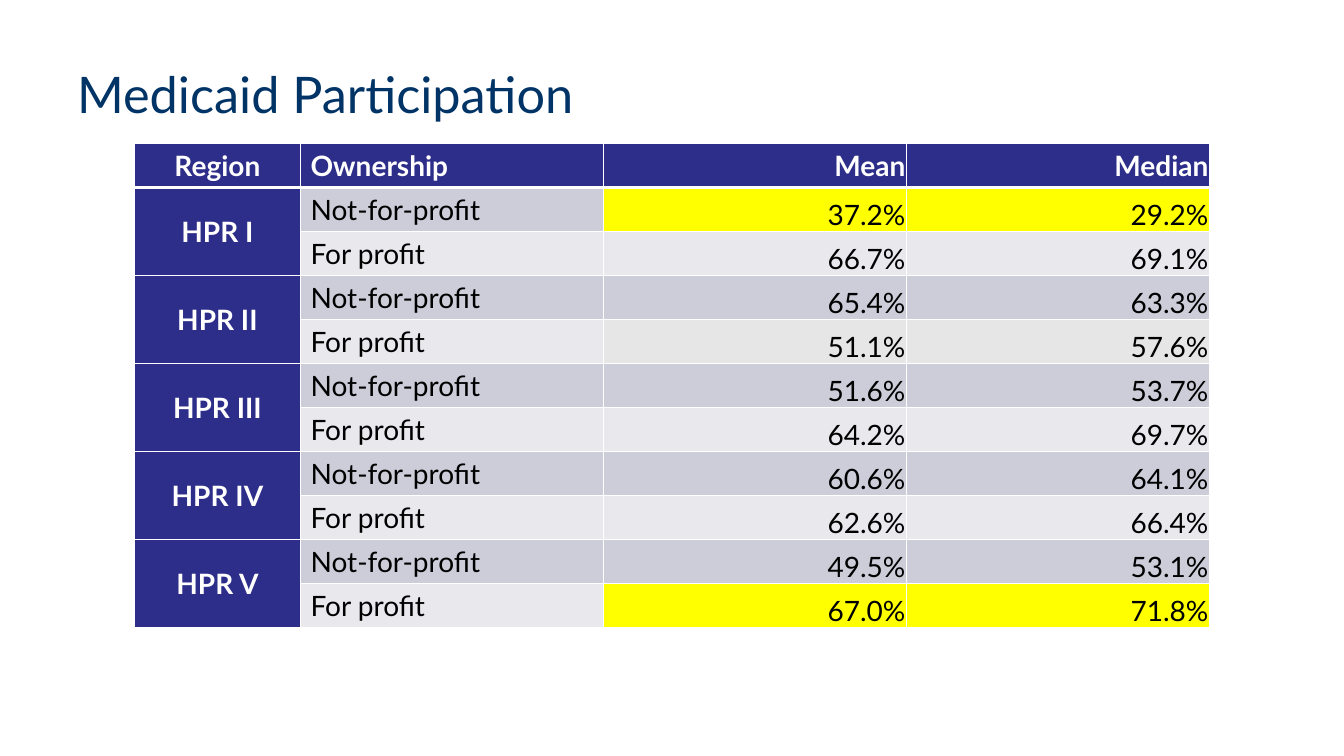
from dataclasses import dataclass

from lxml.etree import SubElement
from pptx import Presentation
from pptx.dml.color import RGBColor
from pptx.enum.text import MSO_ANCHOR as Anchor, PP_ALIGN as Align
from pptx.oxml.ns import qn
from pptx.table import Table, _Cell as Cell
from pptx.text.text import TextFrame
from pptx.util import Emu, Inches, Pt

WIDTH, HEIGHT = Inches(13.33), Inches(7.5)
COLUMN_WEIGHTS = (1.65, 3.01, 3.01, 3.01)
WHITE, BLACK, NAVY, YELLOW = "FFFFFF", "000000", "2D2D8A", "FFFF00"
DARK_BAND, LIGHT_BAND, GREY = "CDCDDA", "E8E8ED", "E6E6E6"
TITLE_BLUE = "003366"


@dataclass(frozen=True)
class Rates:
    """Participation of one ownership group in a region."""
    ownership: str
    mean: str
    median: str
    band: str
    highlight: str = ""


@dataclass(frozen=True)
class Region:
    """A health planning region with its ownership groups."""
    name: str
    groups: tuple[Rates, ...]


def region(name: str, nonprofit: tuple[str, ...], profit: tuple[str, ...]) -> Region:
    """Pair the two ownership groups of a region; a third value is a highlight."""
    return Region(name, (Rates("Not-for-profit", nonprofit[0], nonprofit[1], DARK_BAND, *nonprofit[2:]),
                         Rates("For profit", profit[0], profit[1], LIGHT_BAND, *profit[2:])))


REGIONS = (
    region("HPR I", ("37.2%", "29.2%", YELLOW), ("66.7%", "69.1%")),
    region("HPR II", ("65.4%", "63.3%"), ("51.1%", "57.6%", GREY)),
    region("HPR III", ("51.6%", "53.7%"), ("64.2%", "69.7%")),
    region("HPR IV", ("60.6%", "64.1%"), ("62.6%", "66.4%")),
    region("HPR V", ("49.5%", "53.1%"), ("67.0%", "71.8%", YELLOW)),
)


def colour(value: str) -> RGBColor:
    """Turn a hex string into a colour."""
    return RGBColor.from_string(value)


def write(frame: TextFrame, text: str, *, size: float = 20, ink: str = BLACK,
          bold: bool = False, align: Align = Align.LEFT) -> None:
    """Put one formatted line of text into a frame."""
    paragraph = frame.paragraphs[0]
    paragraph.alignment = align
    run = paragraph.add_run()
    run.text = text
    run.font.name, run.font.size, run.font.bold = "Lato", Pt(size), bold
    run.font.color.rgb = colour(ink)


def draw_borders(cell: Cell, top: float = 1, bottom: float = 1) -> None:
    """Draw white lines around a cell, with widths in points."""
    properties = cell._tc.get_or_add_tcPr()
    for side, width in (("L", 1), ("R", 1), ("T", top), ("B", bottom)):
        line = SubElement(properties, qn(f"a:ln{side}"), w=str(Pt(width)))
        SubElement(SubElement(line, qn("a:solidFill")), qn("a:srgbClr"), val=WHITE)


def fill_cell(cell: Cell, text: str, fill: str, *, anchor: Anchor = Anchor.TOP,
              ink: str = BLACK, bold: bool = False, align: Align = Align.LEFT) -> None:
    """Fill a cell and write its text; right-aligned cells get tight margins."""
    cell.fill.solid()
    cell.fill.fore_color.rgb = colour(fill)
    cell.vertical_anchor = anchor
    if align == Align.RIGHT:
        cell.margin_left = cell.margin_right = cell.margin_top = Inches(0.01)
        cell.margin_bottom = 0
    write(cell.text_frame, text, ink=ink, bold=bold, align=align)


def fill_header(table: Table) -> None:
    """Write the column headings."""
    headings = (("Region", Align.CENTER, Anchor.MIDDLE), ("Ownership", Align.LEFT, Anchor.TOP),
                ("Mean", Align.RIGHT, Anchor.MIDDLE), ("Median", Align.RIGHT, Anchor.MIDDLE))
    for column, (heading, align, anchor) in enumerate(headings):
        fill_cell(table.cell(0, column), heading, NAVY, anchor=anchor,
                  ink=WHITE, bold=True, align=align)


def fill_region(table: Table, first_row: int, entry: Region) -> None:
    """Write a region's merged label and its ownership rows."""
    label = table.cell(first_row, 0)
    label.merge(table.cell(first_row + len(entry.groups) - 1, 0))
    fill_cell(label, entry.name, NAVY, anchor=Anchor.MIDDLE, ink=WHITE,
              bold=True, align=Align.CENTER)
    for row, group in enumerate(entry.groups, first_row):
        fill_cell(table.cell(row, 1), group.ownership, group.band)
        for column, rate in enumerate((group.mean, group.median), 2):
            fill_cell(table.cell(row, column), rate, group.highlight or group.band,
                      anchor=Anchor.BOTTOM, align=Align.RIGHT)


def main() -> None:
    """Build the Medicaid participation slide."""
    deck = Presentation()
    deck.slide_width, deck.slide_height = WIDTH, HEIGHT
    shapes = deck.slides.add_slide(deck.slide_layouts[6]).shapes

    title = shapes.add_textbox(Emu(int(WIDTH * 0.05)), Emu(int(HEIGHT * 0.04)),
                               Emu(int(WIDTH * 0.9)), Emu(int(HEIGHT / 6))).text_frame
    title.word_wrap = True
    title.vertical_anchor = Anchor.MIDDLE
    write(title, "Medicaid Participation", size=36, ink=TITLE_BLUE)

    row_count = 1 + sum(len(entry.groups) for entry in REGIONS)
    table_width, table_height = int(WIDTH * 0.8), int(HEIGHT * 0.64)
    participation = shapes.add_table(row_count, len(COLUMN_WEIGHTS), Emu(int(WIDTH * 0.1)),
                                     Emu(int(HEIGHT * 0.19)), Emu(table_width),
                                     Emu(table_height)).table
    participation.horz_banding = False
    for column, weight in zip(participation.columns, COLUMN_WEIGHTS):
        column.width = Emu(int(table_width * weight / sum(COLUMN_WEIGHTS)))
    for index, row in enumerate(participation.rows):
        row.height = Emu(table_height // row_count)
        for cell in row.cells:
            draw_borders(cell, top=3 if index == 1 else 1, bottom=3 if index == 0 else 1)

    fill_header(participation)
    next_row = 1
    for entry in REGIONS:
        fill_region(participation, next_row, entry)
        next_row += len(entry.groups)
    deck.save("out.pptx")


if __name__ == "__main__":
    main()
